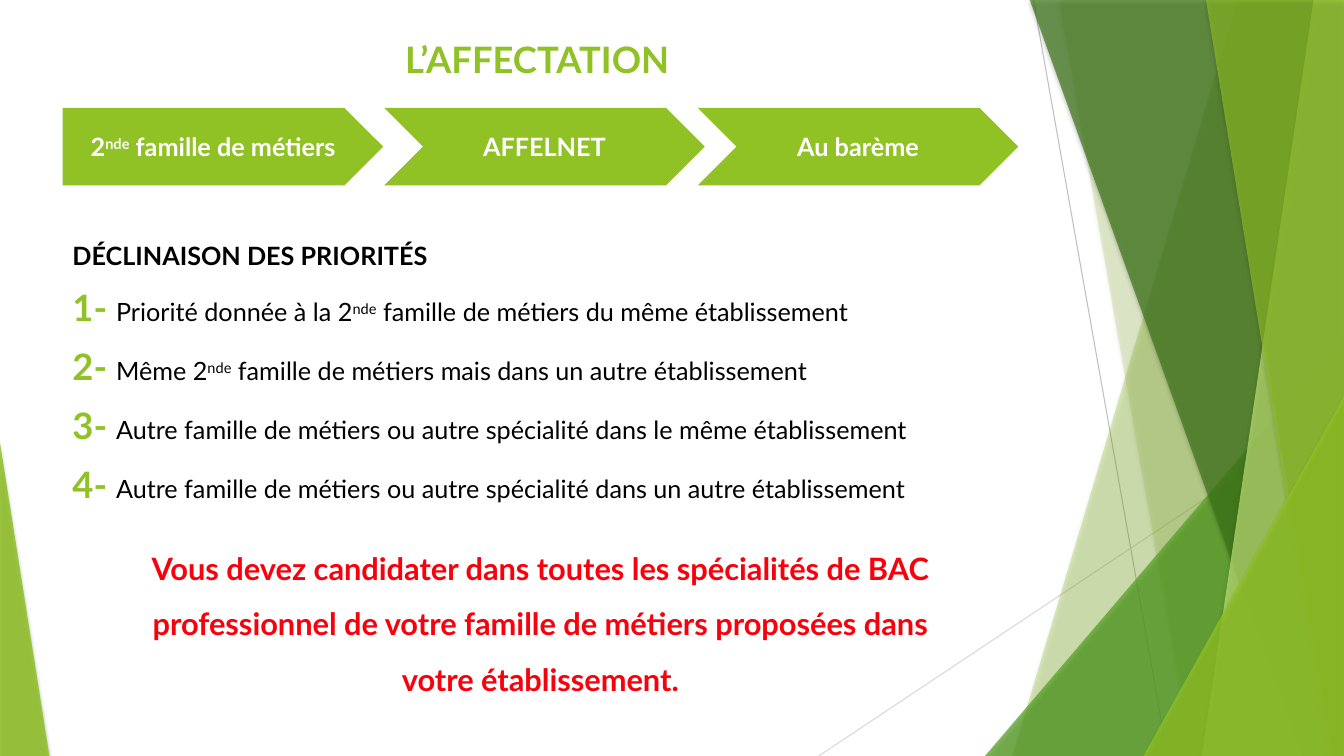
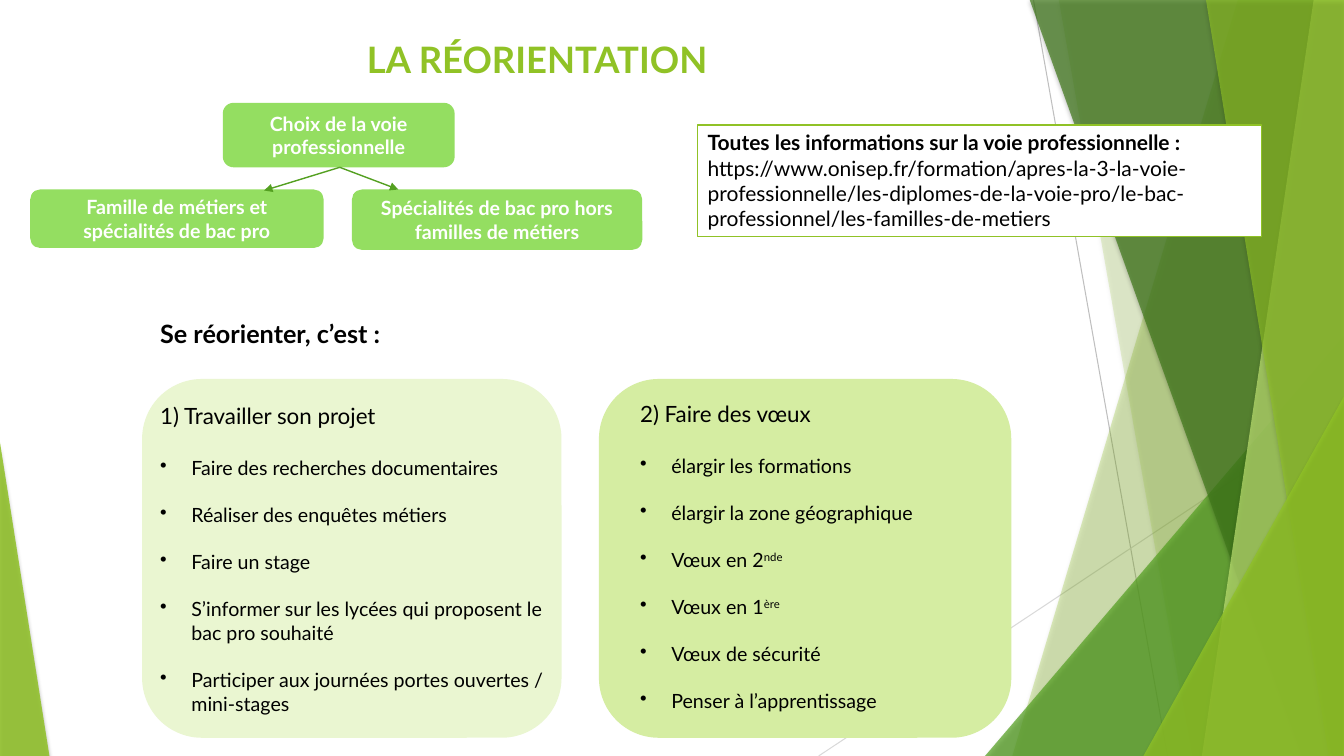
"""Builds two French guidance slides: assignment priorities and reorientation."""
from dataclasses import dataclass

from lxml.etree import SubElement
from pptx import Presentation
from pptx.dml.color import RGBColor
from pptx.enum.shapes import MSO_CONNECTOR, MSO_SHAPE
from pptx.enum.text import MSO_ANCHOR, PP_ALIGN
from pptx.oxml.ns import qn
from pptx.util import Pt

PX = 9144
WIDTH, HEIGHT = 1333, 750


@dataclass(frozen=True)
class Theme:
    """Colours, font and type sizes of both slides."""
    font: str = "Lato"
    green: str = "90C226"
    leaf: str = "54A021"
    forest: str = "3F7819"
    lime: str = "C0E474"
    node: str = "94DE61"
    pale_card: str = "EAF6D1"
    card: str = "D5EDA2"
    white: str = "FFFFFF"
    black: str = "000000"
    red: str = "F9000C"
    grey: str = "BFBFBF"
    light_grey: str = "D9D9D9"
    title: int = 26
    alert: int = 22
    heading: int = 18
    subheading: int = 16
    info: int = 15
    small: int = 14


THEME = Theme()

THIN_LINES = [
    ((1025, 0), (1158, HEIGHT), THEME.grey),
    ((WIDTH, 403), (812, HEIGHT), THEME.light_grey),
]
FACETS = [
    ("band", (1228, 1004), THEME.green, 30),
    ("band", (1050, 1182), THEME.green, 20),
    ("triangle", (977, 333, 356, 417, 1), THEME.leaf, 72),
    ("band", (1021, 1291), THEME.forest, 70),
    ("band", (1303, 1192), THEME.lime, 70),
    ("band", (1196, 1318), THEME.green, 65),
    ("triangle", (1134, 393, 199, 357, 1), THEME.green, 80),
    ("triangle", (0, 439, 49, 311, 0), THEME.green, 85),
]

STEPS = [
    (692, MSO_SHAPE.CHEVRON, "Au barème"),
    (381, MSO_SHAPE.CHEVRON, "AFFELNET"),
    (62, MSO_SHAPE.PENTAGON, "2^nde^ famille de métiers"),
]
PRIORITIES = [
    "Priorité donnée à la 2^nde^ famille de métiers du même établissement",
    "Même 2^nde^ famille de métiers mais dans un autre établissement",
    "Autre famille de métiers ou autre spécialité dans le même établissement",
    "Autre famille de métiers ou autre spécialité dans un autre établissement",
]
ALERT = [
    "Vous devez candidater dans toutes les spécialités de BAC professionnel"
    " de votre famille de métiers proposées dans",
    "votre établissement.",
]

INFO = [
    ("Toutes les informations sur la voie professionnelle :", True),
    ("https://www.onisep.fr/formation/apres-la-3-la-voie-professionnelle/"
     "les-diplomes-de-la-voie-pro/le-bac-professionnel/les-familles-de-metiers", False),
]
CHOICES = [
    ((221, 102, 230, 64), "Choix de la voie professionnelle"),
    ((30, 188, 291, 58), "Famille de métiers et spécialités de bac pro"),
    ((349, 188, 288, 60), "Spécialités de bac pro hors familles de métiers"),
]
BRANCH_START = (337, 166)
BRANCH_ENDS = [(262, 189), (395, 188)]
PROJECT = ("1) Travailler son projet", [
    "Faire des recherches documentaires",
    "Réaliser des enquêtes métiers",
    "Faire un stage",
    "S’informer sur les lycées qui proposent le bac pro souhaité",
    "Participer aux journées portes ouvertes / mini-stages",
])
WISHES = ("2) Faire des vœux", [
    "élargir les formations",
    "élargir la zone géographique",
    "Vœux en 2^nde^",
    "Vœux en 1^ère^",
    "Vœux de sécurité",
    "Penser à l’apprentissage",
])


def emu(*lengths):
    """Turn px lengths into EMU."""
    return [length * PX for length in lengths]


def write(shape, text, size=THEME.heading, color=THEME.black, bold=False, align=PP_ALIGN.LEFT,
          spacing=None, before=None, bullet=False, lead=""):
    """Append one paragraph; text between carets is raised."""
    frame = shape.text_frame
    first = frame.paragraphs[0]
    paragraph = frame.add_paragraph() if first.runs else first
    paragraph.alignment = align
    if spacing:
        paragraph.line_spacing = spacing
    if before:
        paragraph.space_before = Pt(before)
    if bullet:
        properties = paragraph._p.get_or_add_pPr()
        properties.set("marL", str(31 * PX))
        properties.set("indent", str(-31 * PX))
        SubElement(properties, qn("a:buChar")).set("char", "•")
    pieces = [(lead, THEME.title, THEME.green, True, False)]
    pieces += [(part, size, color, bold, index % 2 == 1)
               for index, part in enumerate(text.split("^"))]
    for part, points, ink, strong, raised in pieces:
        if not part:
            continue
        run = paragraph.add_run()
        run.text = part
        run.font.name = THEME.font
        run.font.size = Pt(points)
        run.font.bold = strong
        run.font.color.rgb = RGBColor.from_string(ink)
        if raised:
            run._r.get_or_add_rPr().set("baseline", "30000")


def paint(shape, fill, line=None):
    """Give a shape a flat fill and an optional thin outline."""
    shape.shadow.inherit = False
    shape.fill.solid()
    shape.fill.fore_color.rgb = RGBColor.from_string(fill)
    if line:
        shape.line.color.rgb = RGBColor.from_string(line)
        shape.line.width = Pt(0.75)
    else:
        shape.line.fill.background()


def add_box(slide, kind, box, fill, line=None, anchor=MSO_ANCHOR.MIDDLE):
    """Add a painted preset shape."""
    shape = slide.shapes.add_shape(kind, *emu(*box))
    paint(shape, fill, line)
    shape.text_frame.word_wrap = True
    shape.text_frame.vertical_anchor = anchor
    return shape


def add_textbox(slide, box, anchor=MSO_ANCHOR.TOP):
    """Add a wrapping text box."""
    shape = slide.shapes.add_textbox(*emu(*box))
    shape.text_frame.word_wrap = True
    shape.text_frame.vertical_anchor = anchor
    return shape


def add_line(slide, start, end, color, width, arrow=False):
    """Add a straight connector, with an arrowhead on request."""
    connector = slide.shapes.add_connector(MSO_CONNECTOR.STRAIGHT, *emu(*start, *end))
    connector.line.color.rgb = RGBColor.from_string(color)
    connector.line.width = Pt(width)
    if arrow:
        SubElement(connector.line._get_or_add_ln(), qn("a:tailEnd")).set("type", "triangle")
    SubElement(connector._element.spPr, qn("a:effectLst"))


def add_facet(slide, kind, geometry, color, opacity):
    """Add one translucent, softly shadowed facet of the background."""
    if kind == "band":
        top, bottom = geometry
        builder = slide.shapes.build_freeform(top, -1, scale=PX)
        builder.add_line_segments([(WIDTH, -1), (WIDTH, HEIGHT), (bottom, HEIGHT)], close=True)
        shape = builder.convert_to_shape()
    else:
        *box, peak = geometry
        shape = slide.shapes.add_shape(MSO_SHAPE.ISOSCELES_TRIANGLE, *emu(*box))
        shape.adjustments[0] = peak
    paint(shape, color)
    properties = shape._element.spPr
    fill_color = properties.find(qn("a:solidFill"))[0]
    SubElement(fill_color, qn("a:alpha")).set("val", str(opacity * 1000))
    shadow = SubElement(properties.find(qn("a:effectLst")), qn("a:outerShdw"),
                        blurRad=str(Pt(3)), dist=str(Pt(2)), dir="5400000", rotWithShape="0")
    shadow_color = SubElement(shadow, qn("a:srgbClr"), val=THEME.black)
    SubElement(shadow_color, qn("a:alpha"), val="35000")


def add_slide(presentation, title):
    """Add a slide with the shared background and title."""
    slide = presentation.slides.add_slide(presentation.slide_layouts[6])
    for start, end, color in THIN_LINES:
        add_line(slide, start, end, color, 0.75)
    for facet in FACETS:
        add_facet(slide, *facet)
    write(add_textbox(slide, (46, 28, 974, 56), MSO_ANCHOR.MIDDLE), title, size=THEME.title,
          color=THEME.green, bold=True, align=PP_ALIGN.CENTER, spacing=1.1)
    return slide


def add_list(shape, content, before=None):
    """Write a subheading and its bullets."""
    heading, items = content
    write(shape, heading, size=THEME.subheading, before=before)
    for index, item in enumerate(items):
        write(shape, item, size=THEME.small, bullet=True, before=16.8 if index else 19.2)


def build_assignment(presentation):
    """Build the assignment slide."""
    slide = add_slide(presentation, "L’AFFECTATION")
    priorities = add_textbox(slide, (62, 205, 948, 343))
    write(priorities, "DÉCLINAISON DES PRIORITÉS", bold=True, spacing=Pt(42))
    for number, priority in enumerate(PRIORITIES, 1):
        write(priorities, priority, lead=f"{number}- ", spacing=Pt(42))
    for left, kind, label in STEPS:
        step = add_box(slide, kind, (left, 107, 318, 77), THEME.green)
        write(step, label, color=THEME.white, bold=True, align=PP_ALIGN.CENTER)
    alert = add_textbox(slide, (62, 522, 948, 170))
    for sentence in ALERT:
        write(alert, sentence, size=THEME.alert, color=THEME.red, bold=True,
              align=PP_ALIGN.CENTER, spacing=1.5)


def build_reorientation(presentation):
    """Build the reorientation slide."""
    slide = add_slide(presentation, "LA RÉORIENTATION")
    for left, width, fill in [(594, 409, THEME.card), (141, 416, THEME.pale_card)]:
        add_box(slide, MSO_SHAPE.ROUNDED_RECTANGLE, (left, 376, width, 356), fill)
    info = add_box(slide, MSO_SHAPE.RECTANGLE, (692, 124, 559, 111), THEME.white,
                   line=THEME.green, anchor=MSO_ANCHOR.TOP)
    for text, bold in INFO:
        write(info, text, size=THEME.info, bold=bold)
    for box, label in CHOICES:
        choice = add_box(slide, MSO_SHAPE.ROUNDED_RECTANGLE, box, THEME.node)
        write(choice, label, size=THEME.small, color=THEME.white, bold=True,
              align=PP_ALIGN.CENTER)
    project = add_textbox(slide, (149, 311, 430, 420))
    write(project, "Se réorienter, c’est :", bold=True)
    add_list(project, PROJECT, before=38.4)
    add_list(add_textbox(slide, (625, 392, 445, 340)), WISHES)
    for end in BRANCH_ENDS:
        add_line(slide, BRANCH_START, end, THEME.leaf, 1, arrow=True)


def main():
    """Build and save the presentation."""
    presentation = Presentation()
    presentation.slide_width, presentation.slide_height = emu(WIDTH, HEIGHT)
    build_assignment(presentation)
    build_reorientation(presentation)
    presentation.save("out.pptx")


if __name__ == "__main__":
    main()
